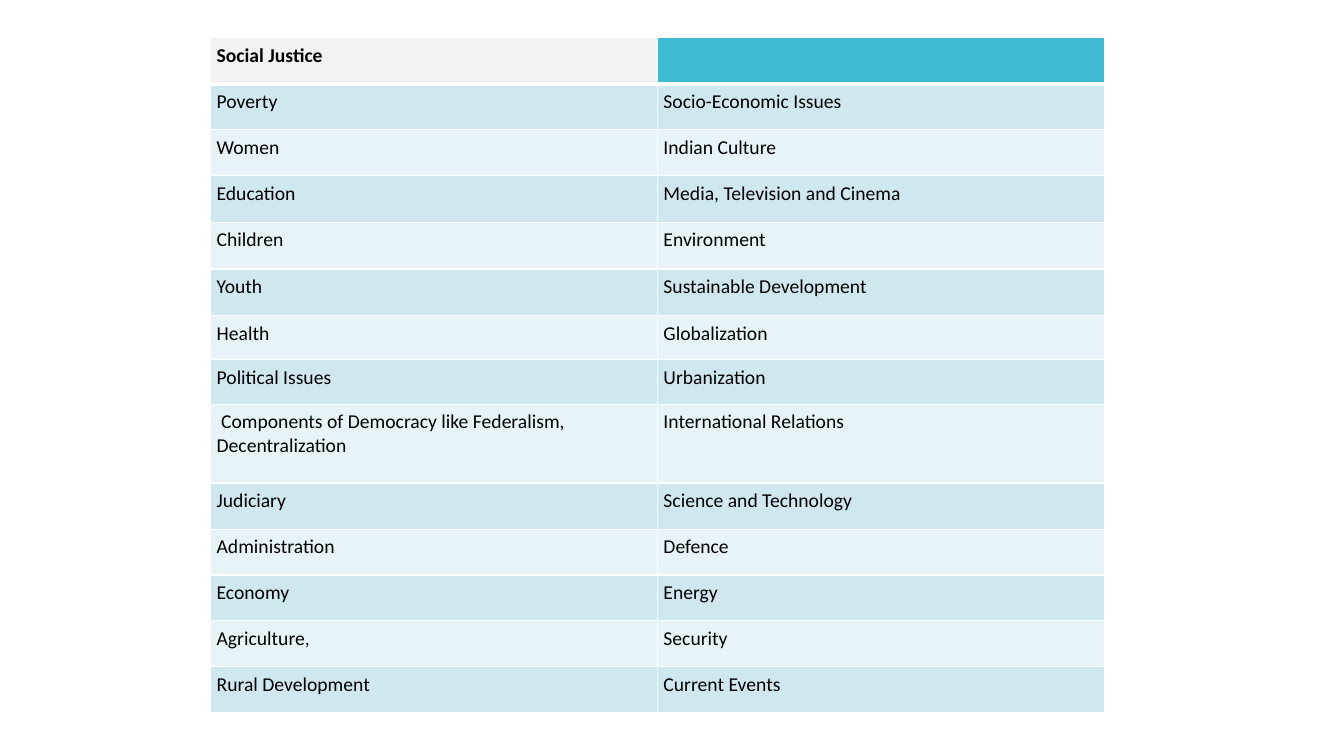
"""Build a slide with a two-column table of social justice topics."""
from lxml.etree import SubElement as Sub
from pptx import Presentation
from pptx.dml.color import RGBColor as Rgb
from pptx.oxml.ns import qn
from pptx.util import Cm, Pt

TOPICS = [
    ("Social Justice", "", 1.17),
    ("Poverty", "Socio-Economic Issues", 1.15),
    ("Women", "Indian Culture", 1.16),
    ("Education", "Media, Television and Cinema", 1.17),
    ("Children", "Environment", 1.18),
    ("Youth", "Sustainable Development", 1.17),
    ("Health", "Globalization", 1.12),
    ("Political Issues", "Urbanization", 1.12),
    (" Components of Democracy like Federalism, Decentralization",
     "International Relations", 1.98),
    ("Judiciary", "Science and Technology", 1.17),
    ("Administration", "Defence", 1.15),
    ("Economy", "Energy", 1.15),
    ("Agriculture,", "Security", 1.16),
    ("Rural Development", "Current Events", 1.15),
]
LEFT, TOP, WIDE = 5.31, 0.95, 11.26
GREY = Rgb(0xF2, 0xF2, 0xF2)
TEAL = Rgb(0x40, 0xBA, 0xD2)
PALE = Rgb(0xE8, 0xF3, 0xF7)
BLUE = Rgb(0xCF, 0xE7, 0xEE)
BLACK = Rgb(0, 0, 0)
WHITE = Rgb(0xFF, 0xFF, 0xFF)
HEAD, BANDS = (GREY, TEAL), (PALE, BLUE)
FONT = {"name": "Calibri", "size": Pt(14)}
PAD = {f"margin_{side}": Cm(0.15) for side in ("left", "right", "top", "bottom")}


def apply(item, look):
    for name, value in look.items():
        setattr(item, name, value)


def edge(cell, row):
    thick = {"L": 1, "R": 1, "T": 3 if row == 1 else 1, "B": 3 if row == 0 else 1}
    props = cell._tc.get_or_add_tcPr()
    for side, size in thick.items():
        line = Sub(props, qn(f"a:ln{side}"), w=str(Pt(size)))
        Sub(Sub(line, qn("a:solidFill")), qn("a:srgbClr"), val=str(WHITE))


def fill(cell, text, row, col):
    edge(cell, row)
    cell.fill.solid()
    cell.fill.fore_color.rgb = BANDS[row % 2] if row else HEAD[col]
    apply(cell, PAD)
    cell.text = text
    font = cell.text_frame.paragraphs[0].font
    apply(font, {**FONT, "bold": row == 0})
    font.color.rgb = BLACK
    for run in cell.text_frame.paragraphs[0].runs:
        apply(run.font, {**FONT, "bold": row == 0})
        run.font.color.rgb = BLACK


def main():
    deck = Presentation()
    apply(deck, {"slide_width": Cm(33.87), "slide_height": Cm(19.05)})
    slide = deck.slides.add_slide(deck.slide_layouts[6])
    high = sum(topic[2] for topic in TOPICS)
    frame = slide.shapes.add_table(
        len(TOPICS), 2, Cm(LEFT), Cm(TOP), Cm(2 * WIDE), Cm(high))
    table = frame.table
    for row, (*texts, size) in enumerate(TOPICS):
        table.rows[row].height = Cm(size)
        for col, text in enumerate(texts):
            fill(table.cell(row, col), text, row, col)
    deck.save("out.pptx")


if __name__ == "__main__":
    main()
